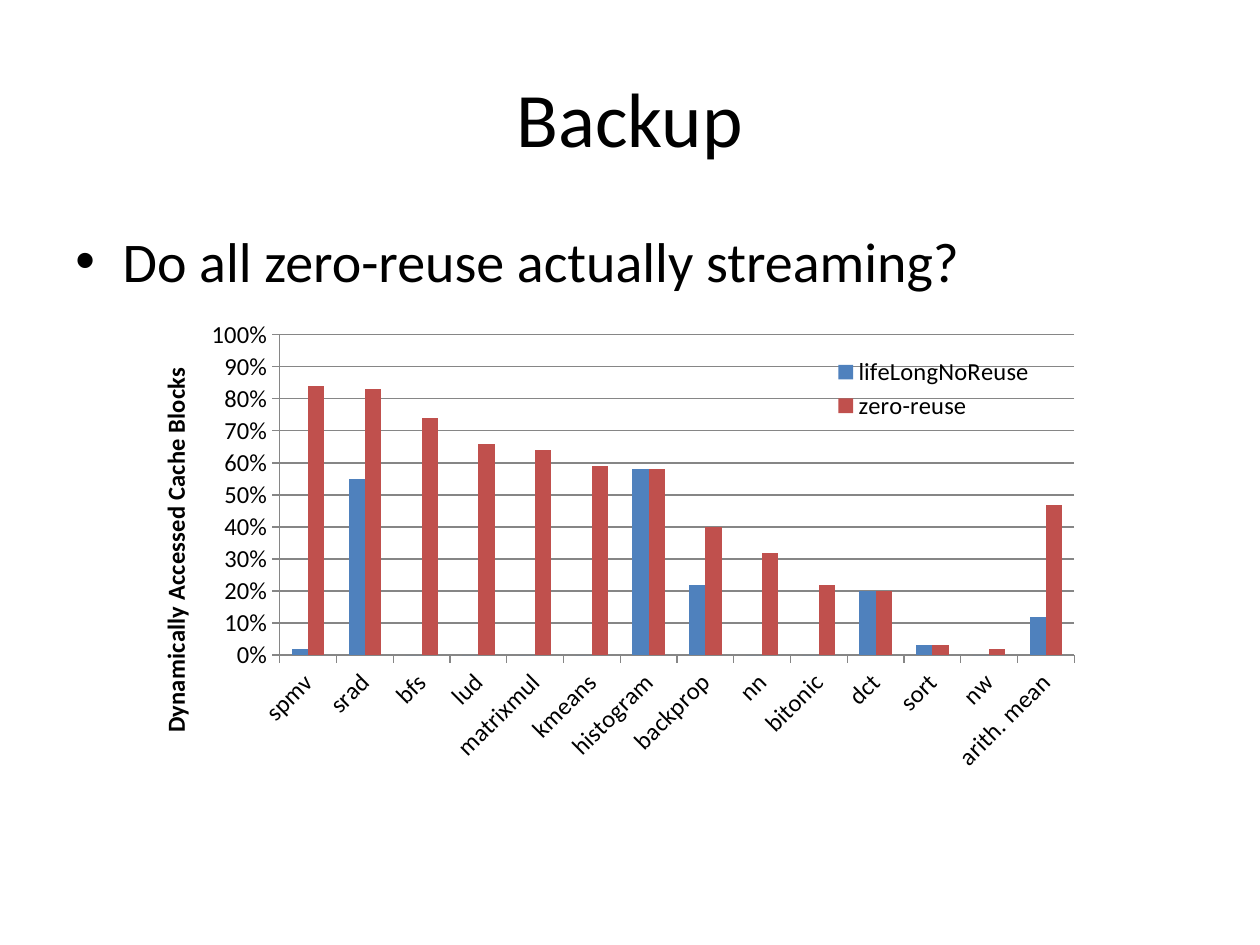
from dataclasses import dataclass

from lxml import etree
from pptx import Presentation
from pptx.chart.data import CategoryChartData
from pptx.dml.color import RGBColor
from pptx.enum.chart import XL_CHART_TYPE as ChartType, XL_LEGEND_POSITION as LegendPosition, XL_TICK_MARK as TickMark
from pptx.enum.text import MSO_ANCHOR as Anchor, PP_ALIGN as Align
from pptx.oxml.ns import qn
from pptx.util import Pt


@dataclass(frozen=True)
class Theme:
    font: str = "Calibri"
    text: RGBColor = RGBColor(0, 0, 0)
    grid: RGBColor = RGBColor(0x86, 0x86, 0x86)
    series: tuple = (RGBColor(0x4F, 0x81, 0xBD), RGBColor(0xC0, 0x50, 0x4D))
    title: Pt = Pt(44)
    body: Pt = Pt(32)
    chart: Pt = Pt(14)


theme = Theme()


def style_font(font, size):
    font.name, font.size, font.color.rgb = theme.font, size, theme.text


def place(element, index, **fractions):
    """Set a manual chart layout from x, y, w and h as fractions of the chart."""
    for old in element.findall(qn("c:layout")):
        element.remove(old)
    layout = etree.Element(qn("c:layout"))
    manual = etree.SubElement(layout, qn("c:manualLayout"))
    if "w" in fractions and index == 0:
        etree.SubElement(manual, qn("c:layoutTarget"), val="inner")
    for mode in ("xMode", "yMode"):
        etree.SubElement(manual, qn(f"c:{mode}"), val="edge")
    for name, value in fractions.items():
        etree.SubElement(manual, qn(f"c:{name}"), val=str(value))
    element.insert(index, layout)


deck = Presentation()
deck.slide_width, deck.slide_height = Pt(720), Pt(540)
page = deck.slides.add_slide(deck.slide_layouts[6])

# Title
box = page.shapes.add_textbox(Pt(36), Pt(21.6), Pt(648), Pt(90))
box.text_frame.word_wrap = True
box.text_frame.vertical_anchor = Anchor.MIDDLE
para = box.text_frame.paragraphs[0]
para.text = "Backup"
para.alignment = Align.CENTER
style_font(para.font, theme.title)

# Question
box = page.shapes.add_textbox(Pt(36), Pt(126), Pt(648), Pt(356.4))
box.text_frame.word_wrap = True
para = box.text_frame.paragraphs[0]
para.text = "Do all zero-reuse actually streaming?"
properties = para._p.get_or_add_pPr()
properties.set("marL", str(Pt(27)))
properties.set("indent", str(-Pt(27)))
etree.SubElement(properties, qn("a:buFont"), typeface="Arial")
etree.SubElement(properties, qn("a:buChar"), char="•")
style_font(para.font, theme.body)

# Reuse chart
data = CategoryChartData(number_format="0%")
data.categories = ["spmv", "srad", "bfs", "lud", "matrixmul", "kmeans", "histogram",
                   "backprop", "nn", "bitonic", "dct", "sort", "nw", "arith. mean"]
data.add_series("lifeLongNoReuse",
                [0.02, 0.55, 0, 0, 0, 0, 0.58, 0.22, 0, 0, 0.2, 0.03, 0, 0.12])
data.add_series("zero-reuse",
                [0.84, 0.83, 0.74, 0.66, 0.64, 0.59, 0.58, 0.4, 0.32, 0.22, 0.2, 0.03, 0.02, 0.47])
chart = page.shapes.add_chart(ChartType.COLUMN_CLUSTERED, Pt(71.28), Pt(177.84),
                              Pt(553.68), Pt(269.28), data).chart
style_font(chart.font, theme.chart)
chart.has_title = False

plot = chart.plots[0]
plot.gap_width, plot.overlap = 150, 0
plot.vary_by_categories = False
for series, color in zip(plot.series, theme.series):
    series.format.fill.solid()
    series.format.fill.fore_color.rgb = color
place(chart._chartSpace.chart.plotArea, 0, x=0.16, y=0.05, w=0.82, h=0.68)

categories, values = chart.category_axis, chart.value_axis
values.minimum_scale, values.maximum_scale, values.major_unit = 0, 1, 0.1
values.has_major_gridlines = True
values.tick_labels.number_format = "0%"
values.tick_labels.number_format_is_linked = False
for axis in (categories, values):
    axis.major_tick_mark = TickMark.OUTSIDE
    style_font(axis.tick_labels.font, theme.chart)
for lines in (categories, values, values.major_gridlines):
    lines.format.line.color.rgb = theme.grid
    lines.format.line.width = Pt(0.75)
label_body = categories._element.find(f"{qn('c:txPr')}/{qn('a:bodyPr')}")
label_body.set("rot", "-2700000")
label_body.set("vert", "horz")

axis_title = values.axis_title
para = axis_title.text_frame.paragraphs[0]
para.text = "Dynamically Accessed Cache Blocks"
style_font(para.font, theme.chart)
para.font.bold = True
title_body = axis_title.text_frame._txBody.find(qn("a:bodyPr"))
title_body.set("rot", "-5400000")
title_body.set("vert", "horz")
place(axis_title._element, 1, x=0.03, y=0.11)

chart.has_legend = True
legend = chart.legend
legend.position = LegendPosition.RIGHT
legend.include_in_layout = True
style_font(legend.font, theme.chart)
place(legend._element, 1, x=0.72, y=0.09, w=0.23, h=0.15)

deck.save("out.pptx")
